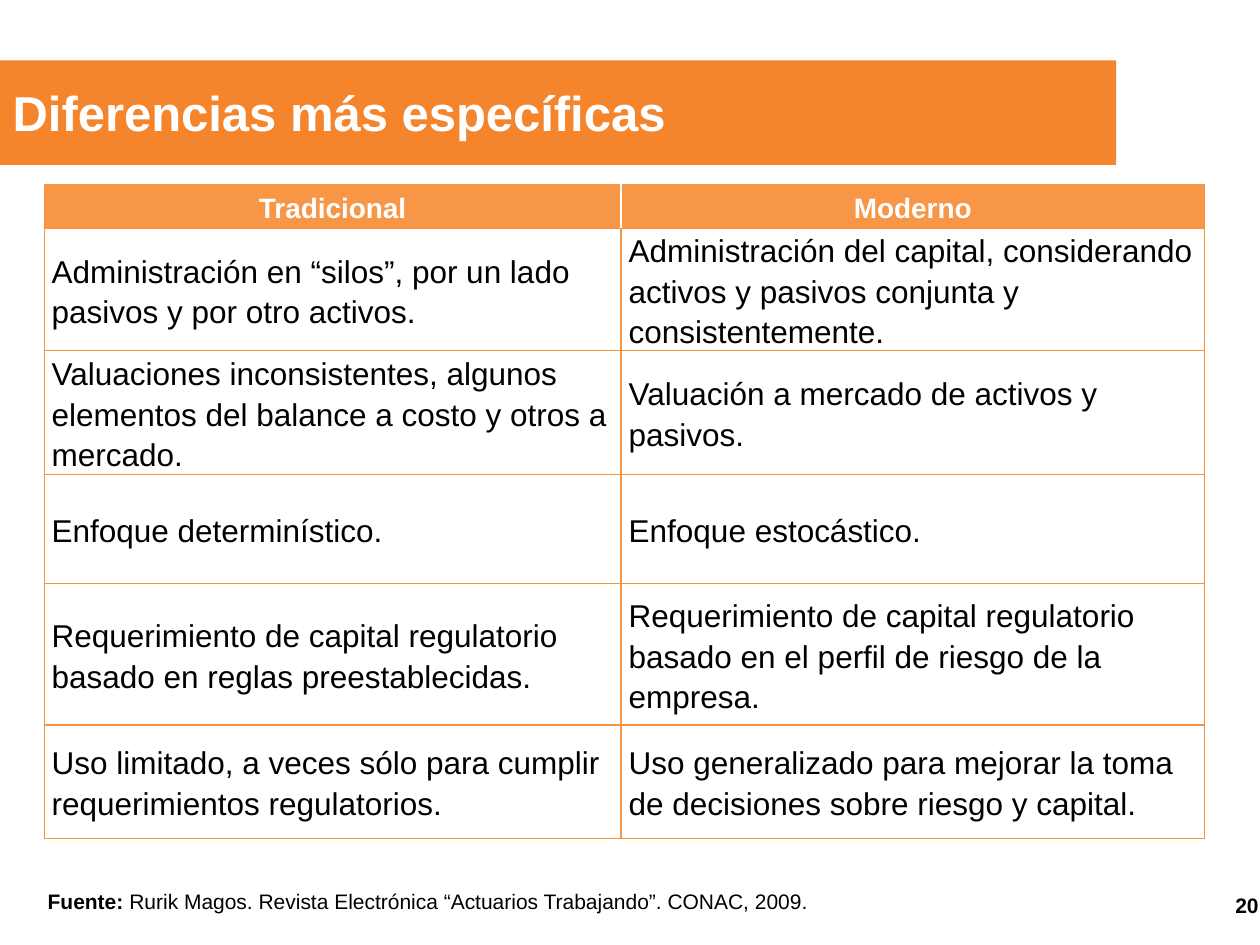
"""Build a slide comparing the traditional and modern approaches in a table."""
from lxml.etree import SubElement
from pptx import Presentation
from pptx.dml.color import RGBColor
from pptx.enum.shapes import MSO_SHAPE
from pptx.enum.text import MSO_ANCHOR, PP_ALIGN
from pptx.oxml.ns import qn
from pptx.util import Inches, Pt

BANNER = RGBColor(0xF5, 0x85, 0x2C)
HEADER = RGBColor(0xF7, 0x96, 0x46)
BORDER = RGBColor(0xF6, 0x92, 0x40)
WHITE = RGBColor(0xFF, 0xFF, 0xFF)
BLACK = RGBColor(0x00, 0x00, 0x00)

COLUMN_WIDTHS = [45.8, 46.3]
ROW_HEIGHTS = [3.5, 9.7, 9.8, 8.7, 11.2, 9]
ROWS = [
    ("Tradicional", "Moderno"),
    ("Administración en “silos”, por un lado pasivos y por otro activos.",
     "Administración del capital, considerando activos y pasivos conjunta y consistentemente."),
    ("Valuaciones inconsistentes, algunos elementos del balance a costo y otros a mercado.",
     "Valuación a mercado de activos y pasivos."),
    ("Enfoque determinístico.", "Enfoque estocástico."),
    ("Requerimiento de capital regulatorio basado en reglas preestablecidas.",
     "Requerimiento de capital regulatorio basado en el perfil de riesgo de la empresa."),
    ("Uso limitado, a veces sólo para cumplir requerimientos regulatorios.",
     "Uso generalizado para mejorar la toma de decisiones sobre riesgo y capital."),
]


def add_run(paragraph, text, size, color, bold=False):
    run = paragraph.add_run()
    run.text = text
    run.font.name = "Arial"
    run.font.size = Pt(size)
    run.font.bold = bold
    run.font.color.rgb = color


def add_border(cell, side, color, width):
    properties = cell._tc.get_or_add_tcPr()
    line = SubElement(properties, qn(f"a:ln{side}"), w=str(Pt(width)))
    fill = SubElement(line, qn("a:solidFill"))
    SubElement(fill, qn("a:srgbClr"), val=str(color))


presentation = Presentation()
presentation.slide_width = Inches(10)
presentation.slide_height = Inches(7.5)
column = presentation.slide_width / 100
row = presentation.slide_height / 75
slide = presentation.slides.add_slide(presentation.slide_layouts[5])

title = slide.shapes.title
title.left, title.top = 0, int(5.3 * row)
title.width, title.height = int(78.9 * column), int(7.2 * row)
title.text_frame.vertical_anchor = MSO_ANCHOR.MIDDLE
paragraph = title.text_frame.paragraphs[0]
paragraph.alignment = PP_ALIGN.LEFT
add_run(paragraph, "Diferencias más específicas", 28, WHITE, bold=True)

banner = slide.shapes.add_shape(
    MSO_SHAPE.RECTANGLE, 0, int(4.8 * row), int(88.6 * column), int(8.3 * row))
banner.shadow.inherit = False
banner.fill.solid()
banner.fill.fore_color.rgb = BANNER
banner.line.fill.background()
title.element.addprevious(banner.element)

table = slide.shapes.add_table(
    len(ROWS), len(COLUMN_WIDTHS), int(3.5 * column), int(14.65 * row),
    int(sum(COLUMN_WIDTHS) * column), int(sum(ROW_HEIGHTS) * row)).table
table.horz_banding = False
for table_column, width in zip(table.columns, COLUMN_WIDTHS):
    table_column.width = int(width * column)
for table_row, height in zip(table.rows, ROW_HEIGHTS):
    table_row.height = int(height * row)

for row_index, texts in enumerate(ROWS):
    is_header = row_index == 0
    divider = WHITE if is_header else HEADER
    for column_index, text in enumerate(texts):
        cell = table.cell(row_index, column_index)
        cell.vertical_anchor = MSO_ANCHOR.MIDDLE
        cell.margin_left = cell.margin_right = Inches(0.06)
        cell.margin_top = cell.margin_bottom = 0
        is_first = column_index == 0
        add_border(cell, "L", *((BORDER, 0.75) if is_first else (divider, 1)))
        add_border(cell, "R", *((divider, 1) if is_first else (BORDER, 0.75)))
        add_border(cell, "T", BORDER, 0.75)
        add_border(cell, "B", BORDER, 0.75)
        cell.fill.solid()
        cell.fill.fore_color.rgb = HEADER if is_header else WHITE
        paragraph = cell.text_frame.paragraphs[0]
        paragraph.line_spacing = 1.15
        paragraph.alignment = PP_ALIGN.CENTER if is_header else PP_ALIGN.LEFT
        add_run(paragraph, text, 16 if is_header else 18,
                WHITE if is_header else BLACK, bold=is_header)

source = slide.shapes.add_textbox(
    int(2.8 * column), int(70 * row), int(92.9 * column), int(3 * row))
source.text_frame.word_wrap = True
paragraph = source.text_frame.paragraphs[0]
paragraph.alignment = PP_ALIGN.JUSTIFY
add_run(paragraph, "Fuente:", 12, BLACK, bold=True)
add_run(paragraph, " Rurik Magos. Revista Electrónica “Actuarios Trabajando”. CONAC, 2009.",
        12, BLACK)

page_number = slide.shapes.add_textbox(
    int(76.6 * column), int(69.8 * row), int(23.3 * column), int(4 * row))
page_number.text_frame.word_wrap = True
page_number.text_frame.margin_right = 0
page_number.text_frame.vertical_anchor = MSO_ANCHOR.MIDDLE
paragraph = page_number.text_frame.paragraphs[0]
paragraph.alignment = PP_ALIGN.RIGHT
add_run(paragraph, "20", 12, BLACK, bold=True)

presentation.save("out.pptx")
